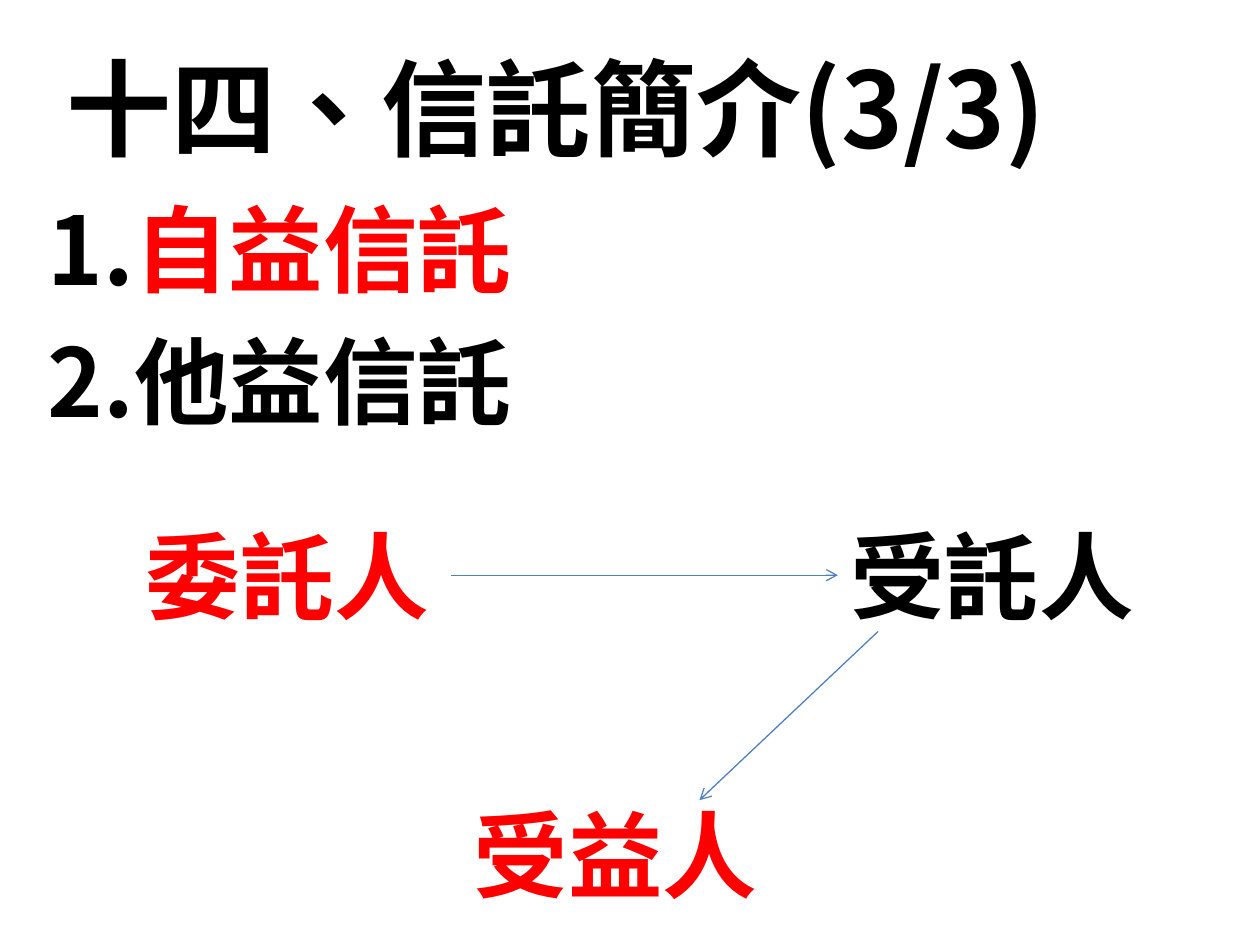
from lxml import etree
from pptx import Presentation
from pptx.dml.color import RGBColor
from pptx.enum.lang import MSO_LANGUAGE_ID
from pptx.enum.shapes import MSO_CONNECTOR
from pptx.enum.text import MSO_ANCHOR, MSO_AUTO_SIZE, PP_ALIGN
from pptx.oxml.ns import qn
from pptx.util import Cm, Pt

STRAIGHT = MSO_CONNECTOR.STRAIGHT
TOP, MIDDLE = MSO_ANCHOR.TOP, MSO_ANCHOR.MIDDLE
NO_AUTOFIT = MSO_AUTO_SIZE.NONE
LEFT = PP_ALIGN.LEFT
TRADITIONAL_CHINESE = MSO_LANGUAGE_ID.TRADITIONAL_CHINESE
RIGHT_SIDE, LEFT_SIDE = 3, 1

FONT = "Noto Sans CJK SC"
BLACK, RED, BLUE = "000000", "FF0000", "4F81BD"


def rgb(value):
    return RGBColor.from_string(value)


def place(shape, left, top, width, height):
    shape.left, shape.top = Cm(left), Cm(top)
    shape.width, shape.height = Cm(width), Cm(height)


def set_frame(frame, anchor):
    frame.word_wrap = True
    frame.auto_size = NO_AUTOFIT
    frame.vertical_anchor = anchor


def style_run(run, size, color):
    run.font.size = Pt(size)
    run.font.bold = True
    run.font.name = FONT
    run.font.language_id = TRADITIONAL_CHINESE
    run.font.color.rgb = rgb(color)
    east_asian = etree.SubElement(run.font._element, qn("a:ea"))
    east_asian.set("typeface", FONT)


def set_title(slide, wording):
    title = slide.shapes.title
    place(title, 1.09, 0.74, 24.31, 2.59)
    set_frame(title.text_frame, TOP)
    title.text_frame.text = wording
    heading = title.text_frame.paragraphs[0]
    heading.alignment = LEFT
    style_run(heading.runs[0], 60, BLACK)


def add_trust_types(slide, trust_types):
    listing = slide.shapes.add_textbox(Cm(0.71), Cm(3.73), Cm(24.21), Cm(13.59))
    frame = listing.text_frame
    set_frame(frame, TOP)
    for index, parts in enumerate(trust_types):
        entry = frame.add_paragraph() if index else frame.paragraphs[0]
        entry.space_before = Pt(10.4 if index else 0)
        for wording, color in parts:
            run = entry.add_run()
            run.text = wording
            style_run(run, 54, color)


def add_party(slide, wording, left, top, width, color):
    party = slide.shapes.add_textbox(Cm(left), Cm(top), Cm(width), Cm(2.57))
    set_frame(party.text_frame, MIDDLE)
    party.text_frame.text = wording
    style_run(party.text_frame.paragraphs[0].runs[0], 54, color)
    return party


def add_arrow(slide, start_x, start_y, end_x, end_y):
    arrow = slide.shapes.add_connector(
        STRAIGHT, Cm(start_x), Cm(start_y), Cm(end_x), Cm(end_y))
    arrow.line.color.rgb = rgb(BLUE)
    arrow.line.width = Pt(0.75)
    etree.SubElement(arrow.line._get_or_add_ln(), qn("a:tailEnd")).set("type", "arrow")
    etree.SubElement(arrow._element.spPr, qn("a:effectLst"))
    return arrow


def main():
    deck = Presentation()
    deck.slide_width, deck.slide_height = Cm(25.4), Cm(19.05)
    slide = deck.slides.add_slide(deck.slide_layouts[5])

    set_title(slide, "十四、信託簡介(3/3)")
    add_trust_types(slide, [
        [("1.", BLACK), ("自益信託", RED)],
        [("2.他益信託", BLACK)],
    ])

    settlor = add_party(slide, "委託人", 2.69, 10.31, 6.4, RED)
    trustee = add_party(slide, "受託人", 16.89, 10.31, 6.4, BLACK)
    add_party(slide, "受益人", 9.3, 15.93, 6.6, RED)

    entrusting = add_arrow(slide, 9.09, 11.6, 16.89, 11.6)
    entrusting.begin_connect(settlor, RIGHT_SIDE)
    entrusting.end_connect(trustee, LEFT_SIDE)
    add_arrow(slide, 17.7, 12.73, 14.1, 16.13)

    deck.save("out.pptx")


if __name__ == "__main__":
    main()
